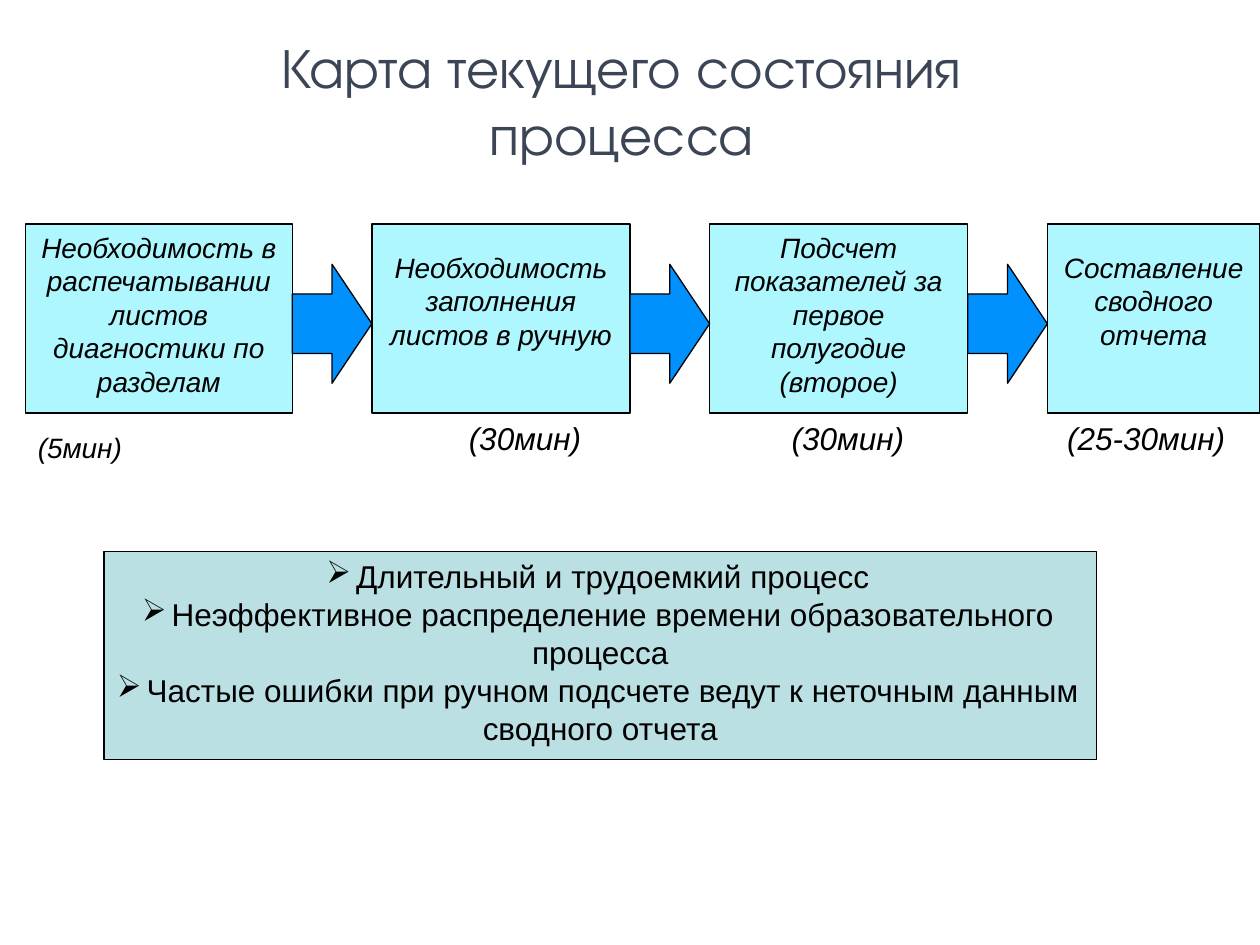
from dataclasses import dataclass

from lxml.etree import SubElement
from pptx import Presentation
from pptx.dml.color import RGBColor
from pptx.enum.shapes import MSO_SHAPE
from pptx.enum.text import MSO_ANCHOR, MSO_AUTO_SIZE, PP_ALIGN
from pptx.oxml.ns import qn
from pptx.util import Pt


@dataclass(frozen=True)
class Theme:
    """Colours, fonts and type sizes of the slide."""
    ink: str = "000000"
    head: str = "3B4555"
    step: str = "AFF7FF"
    arrow: str = "0091FE"
    panel: str = "BBE0E3"
    face: str = "Arial"
    title: str = "TeX Gyre Adventor"
    large: int = 32
    base: int = 18
    small: int = 16
    rule: float = 0.75


class Deck:
    """Draws elements on the current slide in one style."""

    def __init__(self, show, theme):
        self.theme = theme
        self.slide = show.slides.add_slide(show.slide_layouts[5])

    def style(self, para, size, face=None, tint=None, slant=False, align=PP_ALIGN.CENTER):
        """Format a paragraph and its runs."""
        para.alignment = align
        for run in para.runs:
            font = run.font
            font.name = face or self.theme.face
            font.size = Pt(size)
            font.italic = slant
            font.color.rgb = RGBColor.from_string(tint or self.theme.ink)

    def title(self, text, left, top, width, height):
        """Move, fill and format the title placeholder."""
        shape = self.slide.shapes.title
        shape.left, shape.top = Pt(left), Pt(top)
        shape.width, shape.height = Pt(width), Pt(height)
        frame = shape.text_frame
        frame.text = text
        frame.word_wrap = True
        frame.auto_size = MSO_AUTO_SIZE.NONE
        frame.vertical_anchor = MSO_ANCHOR.TOP
        self.style(frame.paragraphs[0], self.theme.large, self.theme.title, self.theme.head)

    def shape(self, kind, fill, left, top, width, height):
        """Add an outlined preset shape."""
        shape = self.slide.shapes.add_shape(kind, Pt(left), Pt(top), Pt(width), Pt(height))
        shape.shadow.inherit = False
        shape.fill.solid()
        shape.fill.fore_color.rgb = RGBColor.from_string(fill)
        shape.line.color.rgb = RGBColor.from_string(self.theme.ink)
        shape.line.width = Pt(self.theme.rule)
        return shape

    def step(self, text, raised, left, top, width, height):
        """Add a process step, its text at the top or just above the middle."""
        box = self.shape(MSO_SHAPE.RECTANGLE, self.theme.step, left, top, width, height)
        frame = box.text_frame
        frame.text = text
        frame.word_wrap = True
        frame.vertical_anchor = MSO_ANCHOR.MIDDLE if raised else MSO_ANCHOR.TOP
        if raised:
            frame.margin_bottom = Pt(24)
        self.style(frame.paragraphs[0], self.theme.small, slant=True)
        return frame

    def time(self, frame, text):
        """Add a duration below the text of a step."""
        para = frame.add_paragraph()
        para.text = text
        para.space_before = Pt(18.4)
        self.style(para, self.theme.small, slant=True, align=PP_ALIGN.LEFT)

    def label(self, text, left, top, width, height):
        """Add a duration label."""
        box = self.slide.shapes.add_textbox(Pt(left), Pt(top), Pt(width), Pt(height))
        frame = box.text_frame
        frame.text = text
        frame.word_wrap = False
        frame.auto_size = MSO_AUTO_SIZE.SHAPE_TO_FIT_TEXT
        self.style(frame.paragraphs[0], self.theme.base, slant=True)

    def panel(self, lines, left, top, width, height):
        """Add a panel of centred bullets."""
        box = self.shape(MSO_SHAPE.RECTANGLE, self.theme.panel, left, top, width, height)
        frame = box.text_frame
        frame.text = "\n".join(lines)
        frame.word_wrap = True
        frame.vertical_anchor = MSO_ANCHOR.TOP
        for para in frame.paragraphs:
            SubElement(para._p.get_or_add_pPr(), qn("a:buChar")).set("char", "➢")
            self.style(para, self.theme.base)


def main():
    show = Presentation()
    show.slide_width, show.slide_height = Pt(720), Pt(540)
    theme = Theme()
    deck = Deck(show, theme)
    deck.title("Карта текущего состояния процесса", 76.5, 15, 557.5, 46)

    steps = [
        ("Необходимость в распечатывании листов диагностики по разделам", False),
        ("Необходимость заполнения листов в ручную", True),
        ("Подсчет показателей за первое полугодие (второе)", False),
        ("Составление сводного отчета", True),
    ]
    gap, pitch = 45.5, 193
    lefts = [14.5] + [212.5 + pitch * i for i in range(3)]
    ends = [left - gap for left in lefts[1:]] + [720]
    frames = [
        deck.step(text, raised, left, 128, end - left, 108)
        for (text, raised), left, end in zip(steps, lefts, ends)
    ]
    deck.time(frames[0], "(5мин)")

    for end in ends[:-1]:
        deck.shape(MSO_SHAPE.RIGHT_ARROW, theme.arrow, end, 151, gap, 68)

    deck.panel([
        "Длительный и трудоемкий процесс",
        "Неэффективное распределение времени образовательного процесса",
        "Частые ошибки при ручном подсчете ведут к неточным данным сводного отчета",
    ], 59.5, 315, 567, 119)

    for text, left, width in [
        ("(30мин)", 260.5, 79),
        ("(30мин)", 445, 79),
        ("(25-30мин)", 602, 106),
    ]:
        deck.label(text, left, 236, width, 29)

    show.save("out.pptx")


if __name__ == "__main__":
    main()
